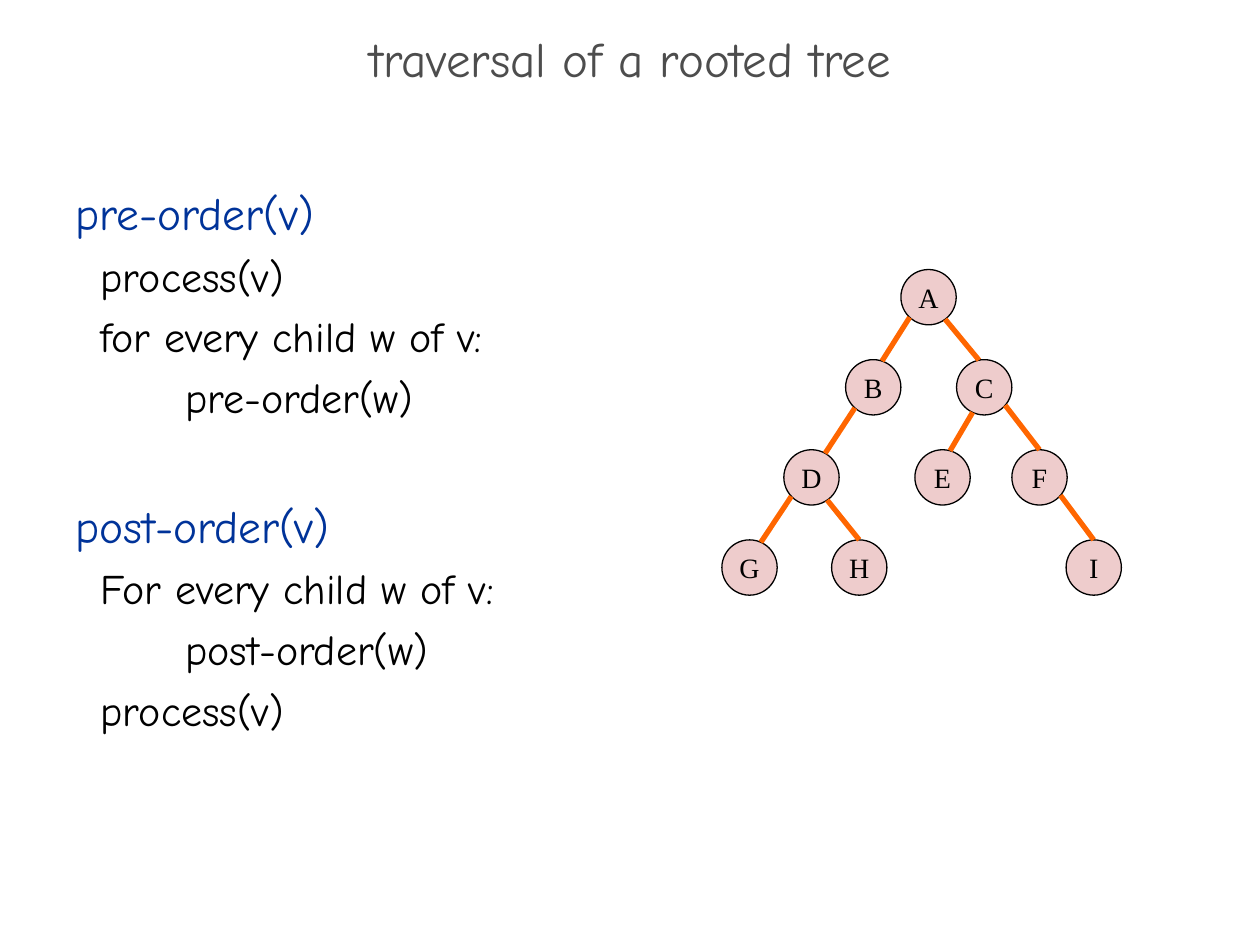
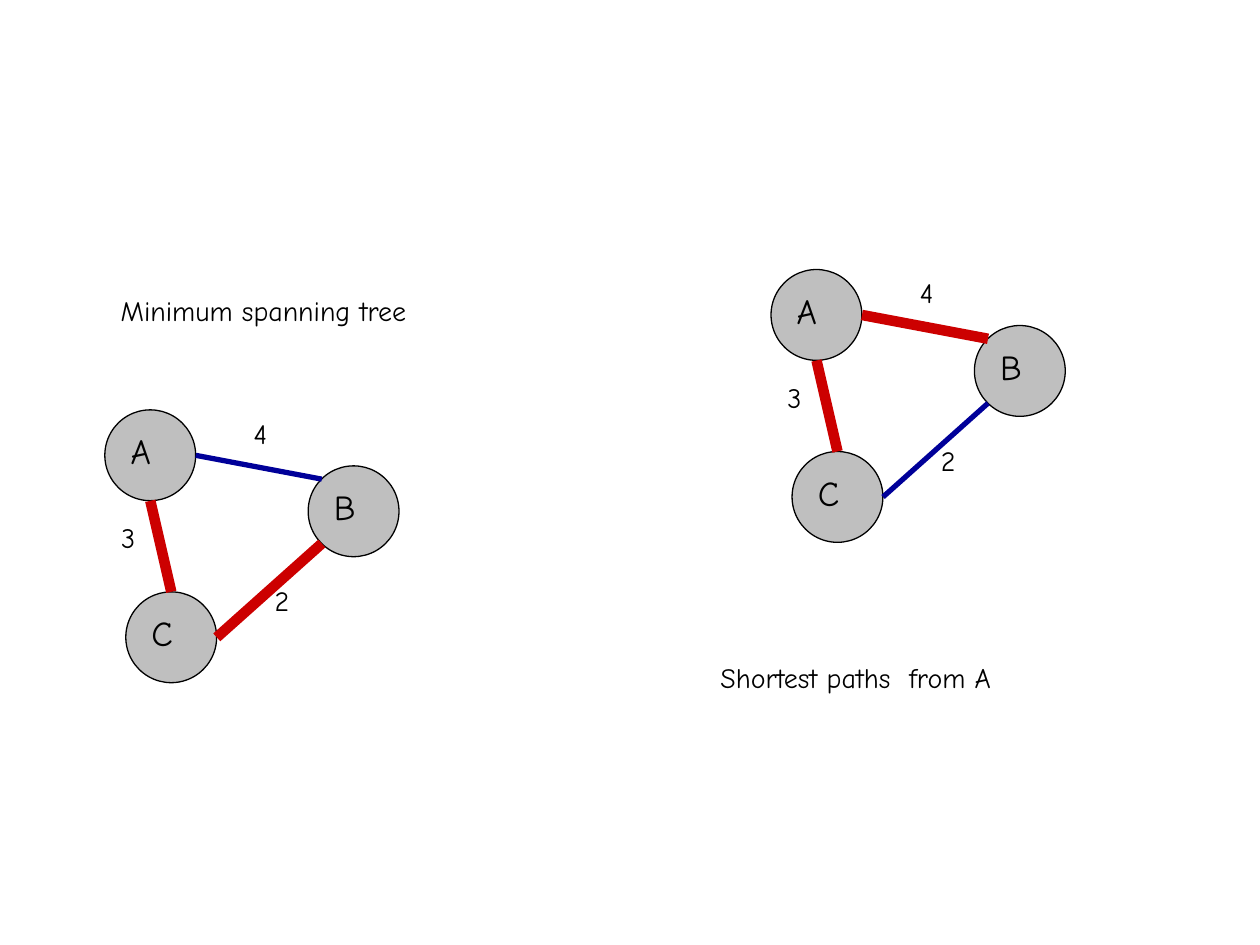
"""Build two slides on tree traversal, spanning trees and shortest paths."""
from dataclasses import dataclass
from math import sqrt
from typing import Any

from lxml import etree
from pptx import Presentation
from pptx import util as u
from pptx.dml import color
from pptx.enum import shapes, text
from pptx.oxml import ns

HAND, SERIF = "Comic Neue", "Times New Roman"
BLACK, GREY, BLUE = "000000", "4D4D4D", "003399"
PINK, ORANGE, SILVER, RED, NAVY = "EECCCC", "FF6600", "BFBFBF", "CC0000", "000099"


@dataclass(frozen=True)
class NodeStyle:
    diameter: float
    fill: str
    font: str
    size: float
    frame: dict[str, Any]
    align: Any


@dataclass(frozen=True)
class Branch:
    parent: str
    child: str
    start_dx: float
    end_dx: float


@dataclass(frozen=True)
class Link:
    name: str
    start: tuple[float, float]
    end: tuple[float, float]
    weight: str
    weight_at: tuple[float, float]


@dataclass(frozen=True)
class Graph:
    origin: tuple[float, float]
    chosen: set[str]
    caption: str
    caption_at: tuple[float, float]


@dataclass(frozen=True)
class CodeLine:
    words: str
    indent: float = 14.4
    size: float = 24
    ink: str = BLACK
    before: float = 0


TREE_NODE = NodeStyle(
    31.6, PINK, SERIF, 16,
    {"word_wrap": False, "vertical_anchor": text.MSO_ANCHOR.MIDDLE}, text.PP_ALIGN.CENTER)
GRAPH_NODE = NodeStyle(
    51.9, SILVER, HAND, 20,
    {"word_wrap": True, "vertical_anchor": text.MSO_ANCHOR.TOP}, text.PP_ALIGN.LEFT)

TREE_TOP, TREE_ROW = 169.8, 51.5
TREE_ROWS = [
    {"A": 530.6},
    {"B": 499, "C": 562.4},
    {"D": 463.7, "E": 538.6, "F": 594},
    {"G": 428.3, "H": 491, "I": 625},
]
BRANCHES = [
    Branch("A", "B", -10.8, 5), Branch("B", "D", -10.5, 7.8),
    Branch("D", "G", -11.5, 6.5), Branch("A", "C", 9.5, -3),
    Branch("C", "F", 12, 0), Branch("F", "I", 12, 0),
    Branch("D", "H", 9, 0), Branch("C", "E", -6.6, 4.3),
]

GRAPH_NODES = {"A": (0, 0), "B": (116.2, 32), "C": (12, 104)}
LINKS = [
    Link("AB", (52, 26), (124, 39.6), "4", (78, 0)),
    Link("AC", (26, 52), (38, 104), "3", (2.2, 59.8)),
    Link("BC", (124, 76.4), (64, 130), "2", (90, 95.8)),
]
GRAPHS = [
    Graph((440.6, 154), {"AB", "AC"}, "Shortest paths  from A", (404.6, 373.7)),
    Graph((59.9, 234.2), {"AC", "BC"}, "Minimum spanning tree", (61.9, 164.2)),
]

HEADING = {"indent": 0, "size": 26, "ink": BLUE}
DEEP = 63
CODE = [
    CodeLine("pre-order(v)", **HEADING),
    CodeLine("process(v)"),
    CodeLine("for every child w of v:"),
    CodeLine("pre-order(w)", DEEP),
    CodeLine("post-order(v)", before=37, **HEADING),
    CodeLine("For every child w of v:"),
    CodeLine("post-order(w)", DEEP),
    CodeLine("process(v)"),
]


def assign(target: Any, values: dict[str, Any]) -> None:
    """Set each attribute of the target from the values."""
    for key, value in values.items():
        setattr(target, key, value)


def rgb(ink: str) -> color.RGBColor:
    """Turn a hex string into a colour."""
    return color.RGBColor.from_string(ink)


def write(paragraph: Any, words: str, font: str, size: float, ink: str) -> None:
    """Add one formatted run to a paragraph."""
    run = paragraph.add_run()
    run.text = words
    assign(run.font, {"name": font, "size": u.Pt(size)})
    run.font.color.rgb = rgb(ink)


def draw_node(canvas: Any, name: str, left: float, top: float, style: NodeStyle) -> Any:
    """Draw a named circle."""
    side = u.Pt(style.diameter)
    node = canvas.add_shape(shapes.MSO_SHAPE.OVAL, u.Pt(left), u.Pt(top), side, side)
    node.shadow.inherit = False
    node.fill.solid()
    node.fill.fore_color.rgb = rgb(style.fill)
    node.line.color.rgb = rgb(BLACK)
    node.line.width = u.Pt(0.75)
    assign(node.text_frame, style.frame)
    label = node.text_frame.paragraphs[0]
    label.alignment = style.align
    write(label, name, style.font, style.size, BLACK)
    return node


def draw_edge(canvas: Any, start: tuple[float, float], end: tuple[float, float],
              ink: str, width: float) -> Any:
    """Draw a straight edge without a shadow."""
    edge = canvas.add_connector(
        shapes.MSO_CONNECTOR.STRAIGHT, *(u.Pt(value) for value in (*start, *end)))
    edge.line.color.rgb = rgb(ink)
    edge.line.width = u.Pt(width)
    etree.SubElement(edge._element.spPr, ns.qn("a:effectLst"))
    return edge


def draw_label(canvas: Any, words: str, left: float, top: float, width: float) -> None:
    """Draw a short text on one line."""
    label = canvas.add_textbox(u.Pt(left), u.Pt(top), u.Pt(width), u.Pt(27))
    label.text_frame.word_wrap = True
    write(label.text_frame.paragraphs[0], words, HAND, 16, BLACK)


def draw_title(slide: Any, words: str) -> None:
    """Place and format the slide title."""
    title = slide.shapes.title
    assign(title, {"left": 0, "top": u.Pt(19.4), "width": u.Pt(720), "height": u.Pt(36)})
    assign(title.text_frame, {"word_wrap": True, "auto_size": text.MSO_AUTO_SIZE.NONE,
                              "vertical_anchor": text.MSO_ANCHOR.MIDDLE})
    paragraph = title.text_frame.paragraphs[0]
    assign(paragraph, {"alignment": text.PP_ALIGN.CENTER, "line_spacing": 0.7})
    write(paragraph, words, HAND, 28, GREY)


def draw_code(slide: Any) -> None:
    """Write both traversal procedures."""
    code = slide.shapes.add_textbox(u.Pt(36), u.Pt(102.2), u.Pt(612), u.Pt(366))
    code.text_frame.word_wrap = True
    for index, line in enumerate(CODE):
        paragraph = code.text_frame.add_paragraph() if index else code.text_frame.paragraphs[0]
        assign(paragraph, {"space_before": u.Pt(line.before), "space_after": u.Pt(6)})
        paragraph._p.get_or_add_pPr().set("marL", str(u.Pt(line.indent)))
        write(paragraph, line.words, HAND, line.size, line.ink)


def draw_tree(slide: Any) -> None:
    """Draw the rooted tree, with branches that start and end on the circles."""
    tree = slide.shapes.add_group_shape().shapes
    radius = TREE_NODE.diameter / 2
    centres = {name: (x, TREE_TOP + depth * TREE_ROW)
               for depth, row in enumerate(TREE_ROWS) for name, x in row.items()}
    nodes = {name: draw_node(tree, name, x - radius, y - radius, TREE_NODE)
             for name, (x, y) in centres.items()}
    for branch in BRANCHES:
        (x1, y1), (x2, y2) = centres[branch.parent], centres[branch.child]
        start = x1 + branch.start_dx, y1 + sqrt(radius ** 2 - branch.start_dx ** 2)
        end = x2 + branch.end_dx, y2 - sqrt(radius ** 2 - branch.end_dx ** 2)
        edge = draw_edge(tree, start, end, ORANGE, 3)
        if branch.end_dx == 0:
            edge.end_connect(nodes[branch.child], 0)


def draw_graph(slide: Any, graph: Graph) -> None:
    """Draw a weighted triangle with its chosen links and caption."""
    canvas = slide.shapes.add_group_shape().shapes
    x, y = graph.origin
    for name, (dx, dy) in GRAPH_NODES.items():
        draw_node(canvas, name, x + dx, y + dy, GRAPH_NODE)
    for link in LINKS:
        start, end = ((x + dx, y + dy) for dx, dy in (link.start, link.end))
        ink, width = (RED, 6) if link.name in graph.chosen else (NAVY, 3)
        draw_edge(canvas, start, end, ink, width)
    for link in LINKS:
        draw_label(canvas, link.weight, x + link.weight_at[0], y + link.weight_at[1], 28)
    draw_label(canvas, graph.caption, *graph.caption_at, 193)


def main() -> None:
    """Build and save the presentation."""
    deck = Presentation()
    assign(deck, {"slide_width": u.Pt(720), "slide_height": u.Pt(540)})
    traversal = deck.slides.add_slide(deck.slide_layouts[5])
    draw_title(traversal, "traversal of a rooted tree")
    draw_code(traversal)
    draw_tree(traversal)
    paths = deck.slides.add_slide(deck.slide_layouts[6])
    for graph in GRAPHS:
        draw_graph(paths, graph)
    deck.save("out.pptx")


if __name__ == "__main__":
    main()
